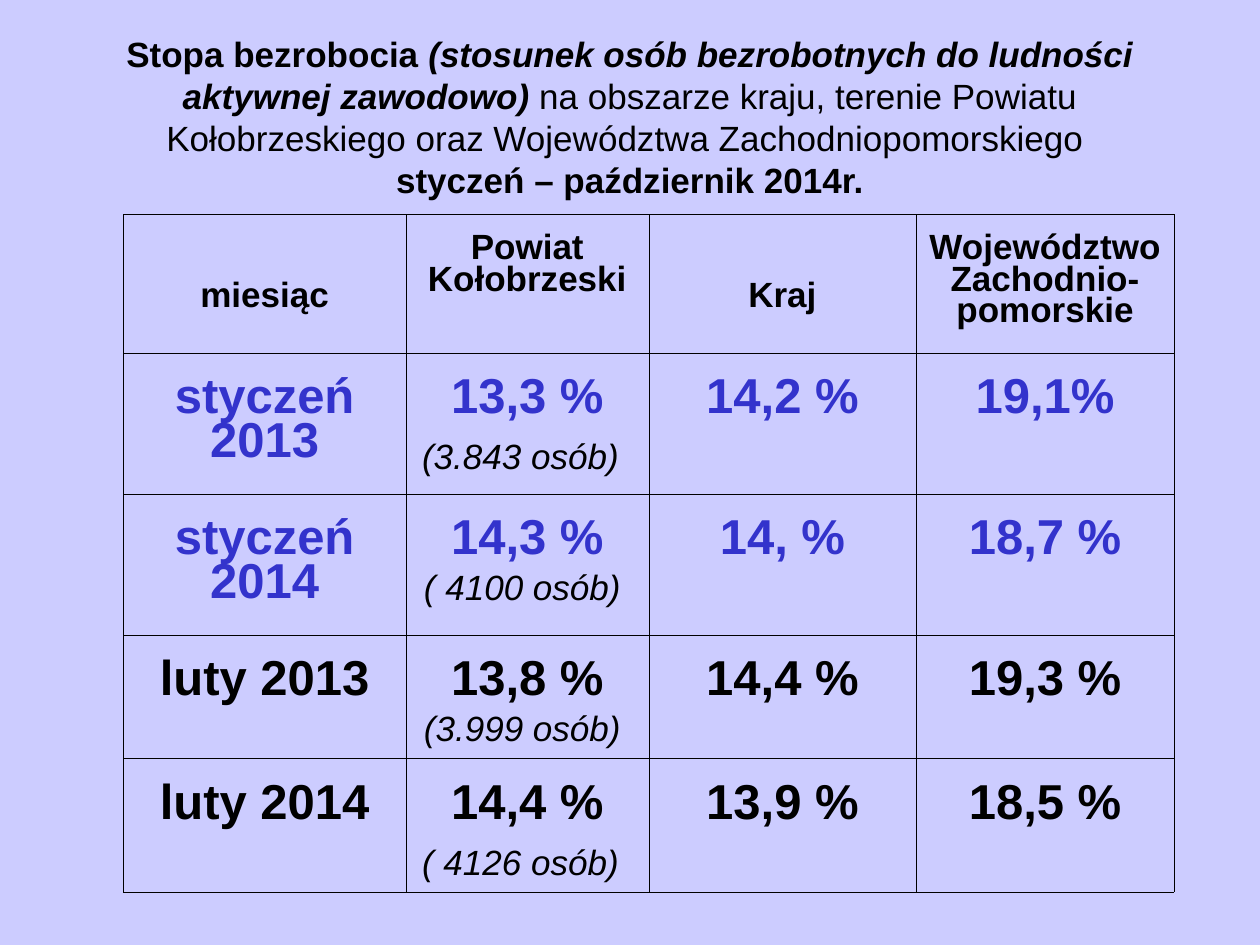
from lxml import etree
from pptx import Presentation
from pptx.dml.color import RGBColor
from pptx.enum.text import MSO_ANCHOR, MSO_AUTO_SIZE, PP_ALIGN
from pptx.oxml.ns import qn
from pptx.util import Inches, Pt

CENTER = PP_ALIGN.CENTER
MIDDLE = MSO_ANCHOR.MIDDLE
TOP = MSO_ANCHOR.TOP
NO_AUTOFIT = MSO_AUTO_SIZE.NONE
BLACK = RGBColor(0x00, 0x00, 0x00)
BLUE = RGBColor(0x33, 0x33, 0xCC)
LAVENDER = RGBColor(0xCC, 0xCC, 0xFF)
OUTER_LINE = Pt(0.23)
INNER_LINE = Pt(0.11)
SMALL, LARGE = 20, 28

COLUMN_WIDTHS = [2.24, 1.93, 2.12, 2.05]
ROW_HEIGHTS = [1.1, 1.12, 1.12, 0.98, 1.06]
HEADINGS = ["miesiąc", "Powiat Kołobrzeski", "Kraj", "Województwo Zachodnio-pomorskie"]
SINGLE_LINE_HEADINGS = ("miesiąc", "Kraj")
MONTHS = [
    (BLUE, ["styczeń 2013", "13,3 %", "14,2 %", "19,1%"], [("(3.843 osób)", SMALL), (" ", LARGE)]),
    (BLUE, ["styczeń 2014", "14,3 %", "14, %", "18,7 %"], [("( 4100 osób) ", SMALL)]),
    (BLACK, ["luty 2013", "13,8 %", "14,4 %", "19,3 %"], [("(3.999 osób) ", SMALL)]),
    (BLACK, ["luty 2014", "14,4 %", "13,9 %", "18,5 %"], [("( 4126 osób)", SMALL), (" ", LARGE)]),
]


def add_run(paragraph, text, size=SMALL, color=BLACK, bold=False, italic=False):
    run = paragraph.add_run()
    run.text = text
    run.font.name = "Arial"
    run.font.size = Pt(size)
    run.font.color.rgb = color
    run.font.bold = bold
    run.font.italic = italic


def set_border(cell, side, width):
    line = etree.SubElement(cell._tc.get_or_add_tcPr(), qn(f"a:ln{side}"), w=str(int(width)))
    fill = etree.SubElement(line, qn("a:solidFill"))
    etree.SubElement(fill, qn("a:srgbClr"), val=str(BLACK))


presentation = Presentation()
presentation.slide_width = Inches(10)
presentation.slide_height = Inches(7.5)
slide = presentation.slides.add_slide(presentation.slide_layouts[5])
slide.background.fill.solid()
slide.background.fill.fore_color.rgb = LAVENDER

title = slide.shapes.title
title.left, title.top = Inches(0.5), Inches(0.3)
title.width, title.height = Inches(9), Inches(1.25)
title.text_frame.auto_size = NO_AUTOFIT
title.text_frame.vertical_anchor = MIDDLE
title.text_frame.word_wrap = True
paragraph = title.text_frame.paragraphs[0]
paragraph.alignment = CENTER
add_run(paragraph, "Stopa bezrobocia ", bold=True)
add_run(paragraph, "(stosunek osób bezrobotnych do ludności aktywnej zawodowo)", bold=True, italic=True)
add_run(paragraph, " na obszarze kraju, terenie Powiatu Kołobrzeskiego oraz Województwa Zachodniopomorskiego ")
paragraph.add_line_break()
add_run(paragraph, "styczeń – październik 2014r.", bold=True)

row_count, column_count = len(ROW_HEIGHTS), len(COLUMN_WIDTHS)
table = slide.shapes.add_table(
    row_count, column_count, Inches(0.98), Inches(1.7),
    Inches(sum(COLUMN_WIDTHS)), Inches(sum(ROW_HEIGHTS)),
).table
table.first_row = False
table.horz_banding = False
for column, width in zip(table.columns, COLUMN_WIDTHS):
    column.width = Inches(width)
for row, height in zip(table.rows, ROW_HEIGHTS):
    row.height = Inches(height)

rows = [(BLACK, HEADINGS, [])] + MONTHS
for row_index, (color, texts, people) in enumerate(rows):
    is_header = row_index == 0
    size = SMALL if is_header else LARGE
    for column_index, text in enumerate(texts):
        cell = table.cell(row_index, column_index)
        cell.vertical_anchor = TOP
        cell.margin_left = cell.margin_right = Inches(0.1)
        cell.margin_bottom = Inches(0.05)
        cell.margin_top = Inches(0.16 if is_header else 0.2)
        if text in SINGLE_LINE_HEADINGS:
            cell.margin_top = Inches(0.54)
        outer_sides = {
            "L": column_index == 0,
            "R": column_index == column_count - 1,
            "T": is_header,
            "B": row_index == row_count - 1,
        }
        for side, is_outer in outer_sides.items():
            set_border(cell, side, OUTER_LINE if is_outer else INNER_LINE)
        cell.fill.background()

        paragraph = cell.text_frame.paragraphs[0]
        add_run(paragraph, text, size, color, bold=True)
        if people and column_index == 1:
            paragraph = cell.text_frame.add_paragraph()
            for people_text, people_size in people:
                add_run(paragraph, people_text, people_size, italic=people_size == SMALL)
        for paragraph in cell.text_frame.paragraphs:
            paragraph.alignment = CENTER
            paragraph.line_spacing = 0.81
            paragraph.space_before = Pt(5 if is_header else 7)

presentation.save("out.pptx")
